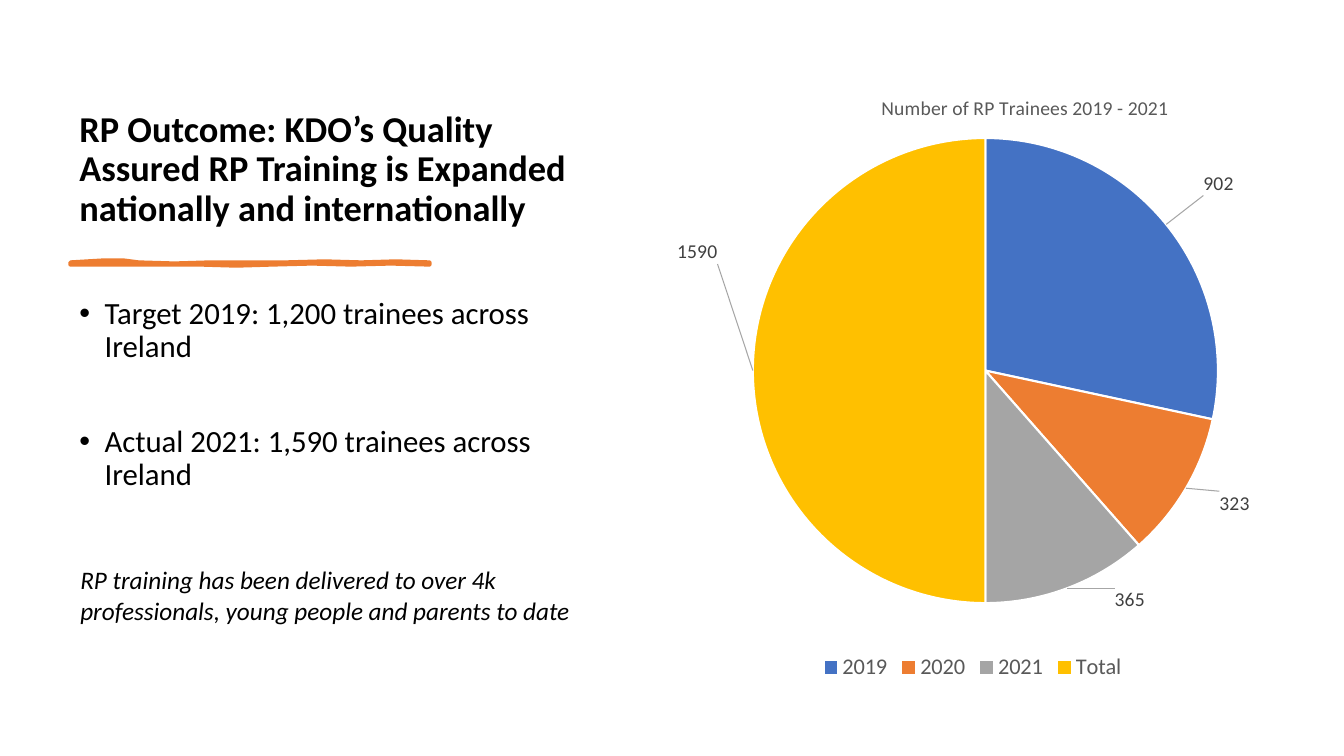
from lxml.etree import SubElement
from pptx import Presentation
from pptx.chart.data import CategoryChartData
from pptx.dml.color import RGBColor
from pptx.enum.chart import XL_CHART_TYPE, XL_LABEL_POSITION, XL_LEGEND_POSITION
from pptx.enum.text import MSO_ANCHOR, MSO_AUTO_SIZE, PP_ALIGN
from pptx.oxml import parse_xml
from pptx.oxml.ns import nsdecls, qn
from pptx.util import Pt

PX = 9525  # EMU per pixel, 96 pixels to the inch
FONT = "Calibri"
COLORS = {
    "text": "000000", "white": "FFFFFF", "accent": "ED7D31",
    "muted": "595959", "label": "404040", "leader": "A6A6A6",
}
# Category: value, slice colour, label offset in px
TRAINEES = {
    "2019": (902, "4472C4", (31, -24)),
    "2020": (323, "ED7D31", (27, 0)),
    "2021": (365, "A5A5A5", (43, -6)),
    "Total": (1590, "FFC000", (-28, -113)),
}
# Upper and lower edges of the hand-drawn stroke, left to right
STROKE_TOP = [(0, 0), (33, -2), (50, -2), (65, 0), (99, 1), (133, 0), (170, 0),
              (205, 0), (242, -1), (277, 0), (310, -1), (342, 0)]
STROKE_BOTTOM = [(0, 2), (62, 2), (124, 2), (158, 3), (192, 2), (230, 1),
                 (267, 2), (305, 1), (342, 2)]


def emu(box):
    return [length * PX for length in box]


def rgb(name):
    return RGBColor.from_string(COLORS.get(name, name))


def style_font(font, size, color="text", bold=False, italic=False):
    font.name, font.size, font.bold, font.italic = FONT, Pt(size), bold, italic
    font.color.rgb = rgb(color)


def write(frame, lines, size, anchor=MSO_ANCHOR.TOP, spacing=None, before=(), indent=None, **style):
    frame.word_wrap = True
    frame.auto_size = MSO_AUTO_SIZE.NONE
    frame.vertical_anchor = anchor
    for index, line in enumerate(lines):
        paragraph = frame.paragraphs[0] if index == 0 else frame.add_paragraph()
        paragraph.alignment = PP_ALIGN.LEFT
        if spacing:
            paragraph.line_spacing = spacing
        paragraph.space_before = Pt(before[index] if before else 0)
        if indent:
            properties = paragraph._p.get_or_add_pPr()
            properties.set("marL", str(indent * PX))
            properties.set("indent", str(-indent * PX))
        run = paragraph.add_run()
        run.text = line
        style_font(run.font, size, **style)


def place(shape, box):
    shape.left, shape.top, shape.width, shape.height = emu(box)


def add_heading(slide, box):
    left, top, width, height = box
    # Title
    title = slide.shapes.title
    place(title, box)
    write(title.text_frame,
          ["RP Outcome: KDO’s Quality Assured RP Training is Expanded nationally and internationally"],
          26, anchor=MSO_ANCHOR.BOTTOM, spacing=0.9, bold=True)
    # Hand-drawn stroke below the title
    x, y = left + 1, top + height + 27
    outline = [(x + dx, y + dy) for dx, dy in STROKE_TOP + STROKE_BOTTOM[::-1]]
    builder = slide.shapes.build_freeform(*outline[0], scale=PX)
    builder.add_line_segments(outline[1:], close=True)
    stroke = builder.convert_to_shape()
    stroke.shadow.inherit = False
    stroke.fill.solid()
    stroke.fill.fore_color.rgb = rgb("accent")
    stroke.line.color.rgb = rgb("accent")
    stroke.line.width = Pt(3)


def add_results(slide, box):
    left, top, width, height = box
    # Target and actual numbers
    results = slide.placeholders[1]
    place(results, box)
    write(results.text_frame,
          ["Target 2019: 1,200 trainees across Ireland", "Actual 2021: 1,590 trainees across Ireland"],
          22, spacing=0.9, before=(10, 44), indent=24)
    # Closing remark
    remark = slide.shapes.add_textbox(*emu((left + 1, top + 254, width + 45, 68)))
    write(remark.text_frame,
          ["RP training has been delivered to over 4k professionals, young people and parents to date"],
          18, italic=True)


def set_layout(parent, index, chart_box, inner=False, **lengths):
    """Put a manual layout, given in px, among the children of a chart part."""
    for old in parent.findall(qn("c:layout")):
        parent.remove(old)
    layout = parse_xml(f"<c:layout {nsdecls('c')}><c:manualLayout/></c:layout>")
    manual = layout[0]
    if inner:
        SubElement(manual, qn("c:layoutTarget")).set("val", "inner")
    if parent.tag != qn("c:dLbl"):
        for mode in ("xMode", "yMode"):
            SubElement(manual, qn(f"c:{mode}")).set("val", "edge")
    for key, length in lengths.items():
        whole = chart_box[2] if key in "xw" else chart_box[3]
        SubElement(manual, qn(f"c:{key}")).set("val", f"{length / whole:.4f}")
    parent.insert(index, layout)


def add_trainee_chart(slide, box):
    data = CategoryChartData()
    data.categories = list(TRAINEES)
    data.add_series("Series 1", [value for value, _, _ in TRAINEES.values()])
    chart = slide.shapes.add_chart(XL_CHART_TYPE.PIE, *emu(box), data).chart
    style_font(chart.font, 10)

    # Title and legend
    chart.has_title = True
    heading = chart.chart_title.text_frame
    heading.text = "Number of RP Trainees 2019 - 2021"
    style_font(heading.paragraphs[0].runs[0].font, 14, color="muted")
    set_layout(chart.chart_title._element, 1, box, x=196, y=19)
    chart.has_legend = True
    chart.legend.position = XL_LEGEND_POSITION.BOTTOM
    chart.legend.include_in_layout = False
    style_font(chart.legend.font, 16, color="muted")

    # Slices with their labels
    plot = chart.plots[0]
    plot.vary_by_categories = True
    series = plot.series[0]
    for index, (_, color, _) in enumerate(TRAINEES.values()):
        point = series.points[index]
        point.format.fill.solid()
        point.format.fill.fore_color.rgb = rgb(color)
        point.format.line.color.rgb = rgb("white")
        point.format.line.width = Pt(1.5)
        point.data_label.position = XL_LABEL_POSITION.OUTSIDE_END
        style_font(point.data_label.font, 14, color="label")
    labels = series._element.find(qn("c:dLbls"))
    for label, (_, _, (dx, dy)) in zip(labels.findall(qn("c:dLbl")), TRAINEES.values()):
        set_layout(label, 1, box, x=dx, y=dy)

    # Leader lines and pie area
    labels.append(parse_xml(
        f"<c:leaderLines {nsdecls('c', 'a')}><c:spPr><a:ln w='9525'><a:solidFill>"
        f"<a:srgbClr val='{COLORS['leader']}'/></a:solidFill></a:ln></c:spPr></c:leaderLines>"))
    plot_area = chart._chartSpace.chart.plotArea
    set_layout(plot_area, 0, box, inner=True, x=77, y=64, w=443, h=444)


def main():
    presentation = Presentation()
    presentation.slide_width, presentation.slide_height = emu((1280, 720))
    slide = presentation.slides.add_slide(presentation.slide_layouts[1])
    add_heading(slide, (66, 67, 506, 156))
    add_results(slide, (66, 279, 506, 372))
    add_trainee_chart(slide, (640, 67, 573, 586))
    presentation.save("out.pptx")


if __name__ == "__main__":
    main()
